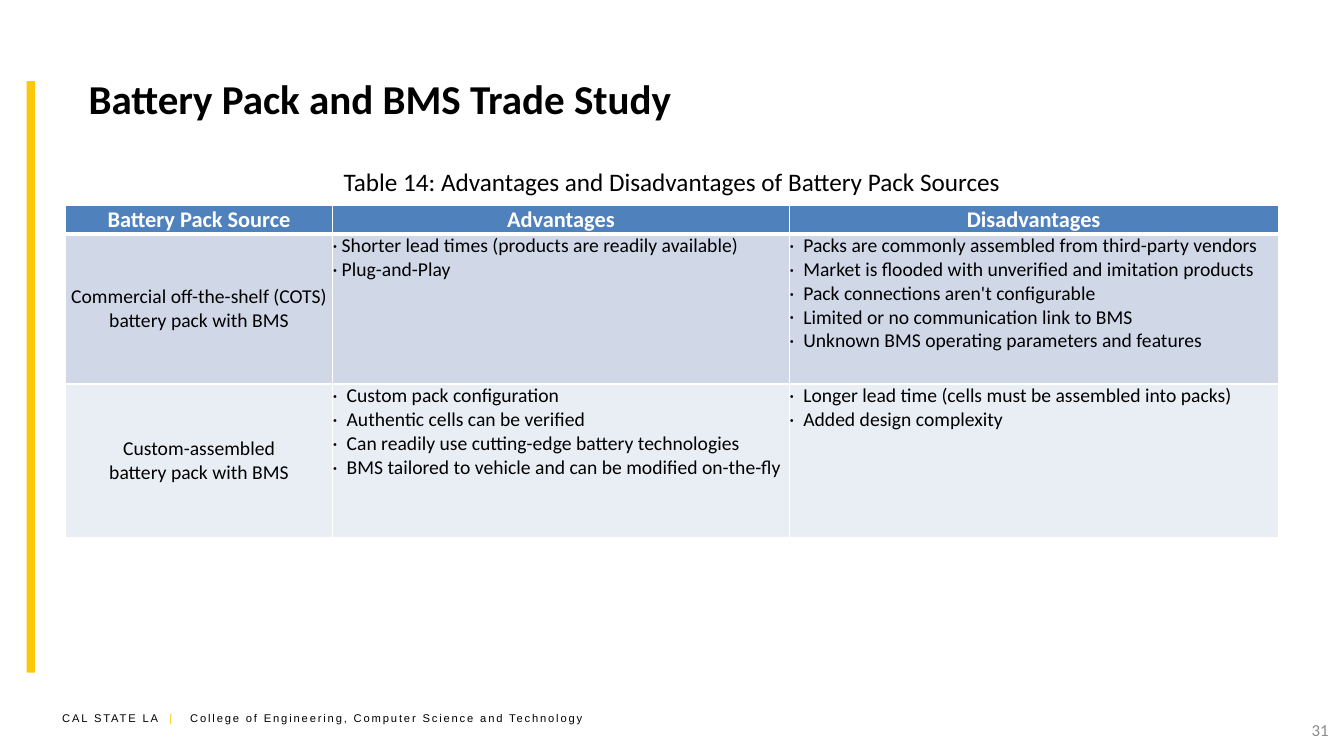
from lxml.etree import SubElement
from pptx import Presentation
from pptx.dml.color import RGBColor
from pptx.enum.shapes import MSO_SHAPE as Shape
from pptx.enum.text import MSO_ANCHOR as Anchor, PP_ALIGN as Align
from pptx.oxml.ns import qn
from pptx.util import Pt

BLACK = RGBColor(0x00, 0x00, 0x00)
WHITE = RGBColor(0xFF, 0xFF, 0xFF)
GOLD = RGBColor(0xFC, 0xC9, 0x0A)
GREY = RGBColor(0x8C, 0x8C, 0x8C)
HEADER_BLUE = RGBColor(0x4F, 0x81, 0xBD)
BAND_DARK = RGBColor(0xD0, 0xD8, 0xE8)
BAND_LIGHT = RGBColor(0xE9, 0xED, 0xF4)

TITLE = {"name": "Calibri", "size": Pt(29.3), "bold": True}
CAPTION = {"name": "Calibri", "size": Pt(18)}
HEADER = {"name": "Calibri", "size": Pt(16), "bold": True}
BODY = {"name": "Calibri", "size": Pt(14), "bold": False}
FOOTER = {"name": "Arial", "size": Pt(8)}
NUMBER = {"name": "Calibri", "size": Pt(12)}

COLUMN_WIDTHS = (190.8, 326.2, 349.2)
ROW_HEIGHTS = (20.2, 107.2, 109.4)
HEADINGS = ("Battery Pack Source", "Advantages", "Disadvantages")
SOURCES = (
    (
        ("Commercial off-the-shelf (COTS)", "battery pack with BMS"),
        ("Shorter lead times (products are readily available)", "Plug-and-Play"),
        (
            "Packs are commonly assembled from third-party vendors",
            "Market is flooded with unverified and imitation products",
            "Pack connections aren't configurable",
            "Limited or no communication link to BMS",
            "Unknown BMS operating parameters and features",
        ),
    ),
    (
        ("Custom-assembled", "battery pack with BMS"),
        (
            "Custom pack configuration",
            "Authentic cells can be verified",
            "Can readily use cutting-edge battery technologies",
            "BMS tailored to vehicle and can be modified on-the-fly",
        ),
        (
            "Longer lead time (cells must be assembled into packs)",
            "Added design complexity",
        ),
    ),
)


def style_font(font, formats, color):
    for name, value in formats.items():
        setattr(font, name, value)
    font.color.rgb = color


def add_text(slide, box, text, formats, color=BLACK, align=Align.LEFT, anchor=Anchor.TOP):
    shape = slide.shapes.add_textbox(*map(Pt, box))
    frame = shape.text_frame
    frame.word_wrap = True
    frame.vertical_anchor = anchor
    paragraph = frame.paragraphs[0]
    paragraph.alignment = align
    if text:
        run = paragraph.add_run()
        run.text = text
        style_font(run.font, formats, color)
    return paragraph


def add_footer(slide):
    paragraph = add_text(slide, (37.4, 504.7, 398.2, 17.3), "", FOOTER)
    tabs = SubElement(paragraph._p.get_or_add_pPr(), qn("a:tabLst"))
    SubElement(tabs, qn("a:tab"), pos=str(Pt(91.4)), algn="l")
    parts = (
        ("CAL STATE LA ", BLACK),
        (" |\t", GOLD),
        ("College of Engineering, Computer Science and Technology", BLACK),
    )
    for text, color in parts:
        run = paragraph.add_run()
        run.text = text
        style_font(run.font, FOOTER, color)
        run.font._element.set("spc", "130")


def add_bar(slide, box, color):
    bar = slide.shapes.add_shape(Shape.RECTANGLE, *map(Pt, box))
    bar.shadow.inherit = False
    bar.fill.solid()
    bar.fill.fore_color.rgb = color
    bar.line.fill.background()


def add_bullet(paragraph, indent):
    properties = paragraph._p.get_or_add_pPr()
    properties.set("marL", str(Pt(indent)))
    properties.set("indent", str(-Pt(indent)))
    SubElement(properties, qn("a:buFont"), typeface="Calibri")
    SubElement(properties, qn("a:buChar"), char="·")


def set_borders(cell, bottom):
    properties = cell._tc.get_or_add_tcPr()
    for position, (side, width) in enumerate((("L", 1), ("R", 1), ("T", 1), ("B", bottom))):
        line = SubElement(properties, qn(f"a:ln{side}"), w=str(Pt(width)))
        fill = SubElement(line, qn("a:solidFill"))
        SubElement(fill, qn("a:srgbClr"), val=str(WHITE))
        properties.insert(position, line)


def fill_cell(cell, lines, formats, color, background, bullet_indent=0, bottom=1):
    for side in ("left", "right", "top", "bottom"):
        setattr(cell, f"margin_{side}", 0)
    cell.vertical_anchor = Anchor.TOP if bullet_indent else Anchor.MIDDLE
    cell.fill.solid()
    cell.fill.fore_color.rgb = background
    set_borders(cell, bottom)
    frame = cell.text_frame
    for index, line in enumerate(lines):
        paragraph = frame.add_paragraph() if index else frame.paragraphs[0]
        paragraph.alignment = Align.LEFT if bullet_indent else Align.CENTER
        if bullet_indent:
            add_bullet(paragraph, bullet_indent)
        run = paragraph.add_run()
        run.text = line
        style_font(run.font, formats, color)


def add_trade_table(slide):
    size = (sum(COLUMN_WIDTHS), sum(ROW_HEIGHTS))
    table = slide.shapes.add_table(3, 3, Pt(46.8), Pt(146.9), *map(Pt, size)).table
    for column, width in zip(table.columns, COLUMN_WIDTHS):
        column.width = Pt(width)
    for row, height in zip(table.rows, ROW_HEIGHTS):
        row.height = Pt(height)
    for column, heading in enumerate(HEADINGS):
        fill_cell(table.cell(0, column), (heading,), HEADER, WHITE, HEADER_BLUE, bottom=3)
    indents = ((0, 6.5, 10), (0, 10, 10))
    bands = (BAND_DARK, BAND_LIGHT)
    for row, (source, row_indents, band) in enumerate(zip(SOURCES, indents, bands), 1):
        for column, (lines, indent) in enumerate(zip(source, row_indents)):
            fill_cell(table.cell(row, column), lines, BODY, BLACK, band, indent)


def main():
    presentation = Presentation()
    presentation.slide_width = Pt(960)
    presentation.slide_height = Pt(540)
    slide = presentation.slides.add_slide(presentation.slide_layouts[6])
    add_footer(slide)
    add_bar(slide, (19.1, 58, 5.8, 422.6), GOLD)
    add_text(slide, (56.2, 25.2, 854.6, 90), "Battery Pack and BMS Trade Study", TITLE,
             anchor=Anchor.MIDDLE)
    add_trade_table(slide)
    add_text(slide, (236.9, 115.2, 486, 28.8),
             "Table 14: Advantages and Disadvantages of Battery Pack Sources", CAPTION,
             align=Align.CENTER)
    add_text(slide, (732.2, 506.9, 223.9, 28.8), "31", NUMBER, GREY, Align.RIGHT, Anchor.MIDDLE)
    presentation.save("out.pptx")


if __name__ == "__main__":
    main()
